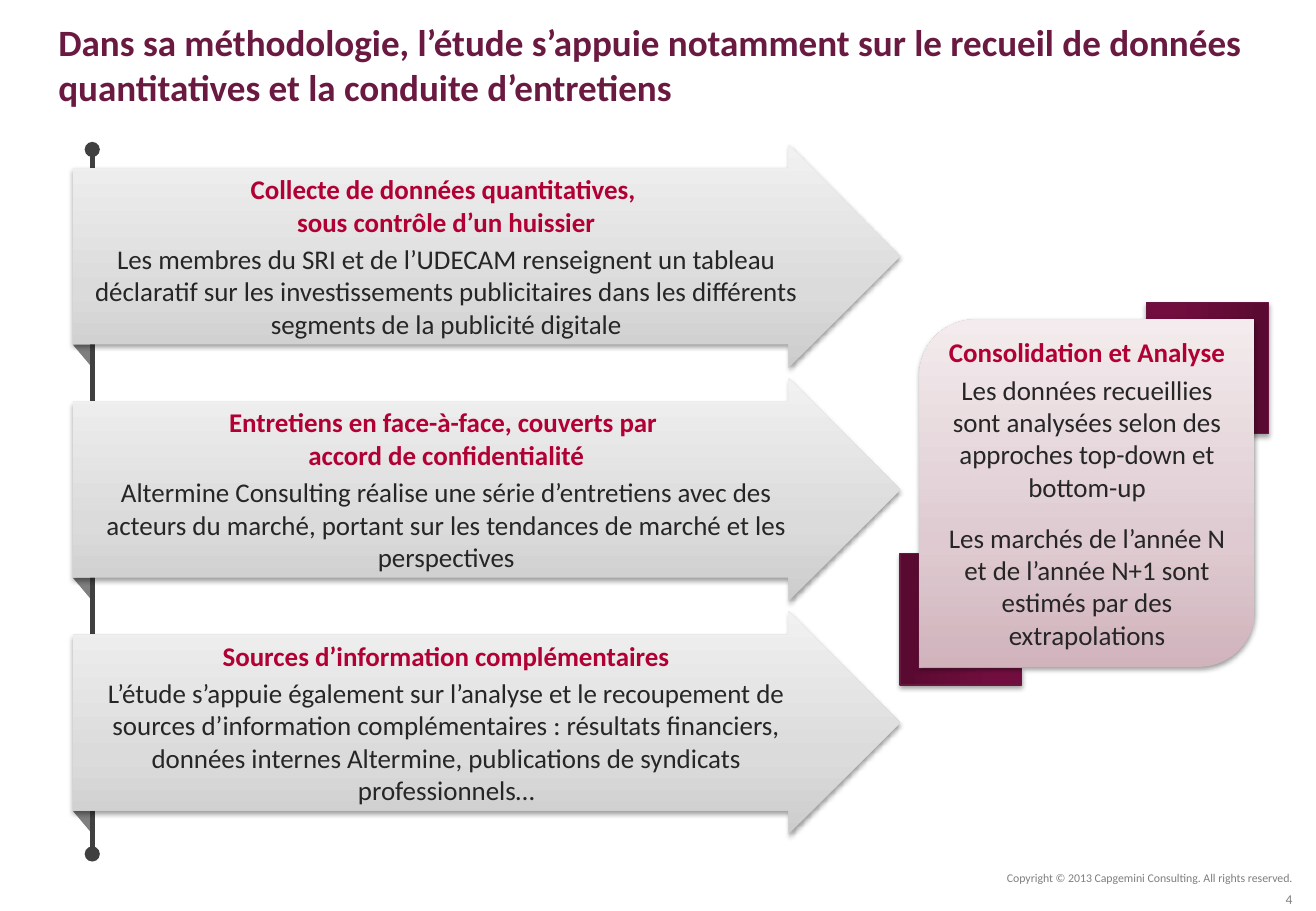
from copy import deepcopy
from lxml import etree
from pptx import Presentation
from pptx.dml.color import RGBColor
from pptx.enum.shapes import MSO_CONNECTOR, MSO_SHAPE
from pptx.enum.text import MSO_ANCHOR, PP_ALIGN
from pptx.oxml.ns import qn
from pptx.util import Pt

ARROW, CORNER = MSO_SHAPE.RIGHT_ARROW, MSO_SHAPE.CORNER
CARD, FOLD = MSO_SHAPE.ROUND_2_DIAG_RECTANGLE, MSO_SHAPE.RIGHT_TRIANGLE
LINE = MSO_CONNECTOR.STRAIGHT
MIDDLE = MSO_ANCHOR.MIDDLE
LEFT, CENTER, RIGHT = PP_ALIGN.LEFT, PP_ALIGN.CENTER, PP_ALIGN.RIGHT

COLORS = {"title": "6A1A41", "head": "B10034", "body": "262626",
          "gray": "7F7F7F", "rail": "404040", "edge": "6A1740",
          "shade": "000000"}
FADES = {
    "arrow": [(0, "CCCCCC"), (35, "DBDBDB"), (100, "F1F1F1")],
    "card": [(0, "D1B3BC"), (35, "DECAD0"), (100, "F3EBED")],
    "corner": [(0, "580A30"), (80, "720E3F"), (100, "750C3F")],
}
HEAD = {"size": Pt(16), "bold": True, "color": "head"}
BODY = {"size": Pt(16), "bold": False, "color": "body"}

TITLE = ("Dans sa méthodologie, l’étude s’appuie notamment sur le recueil de "
         "données quantitatives et la conduite d’entretiens")
STEPS = [
    ("Collecte de données quantitatives, \nsous contrôle d’un huissier",
     "Les membres du SRI et de l’UDECAM renseignent un tableau déclaratif sur "
     "les investissements publicitaires dans les différents segments de la "
     "publicité digitale"),
    ("Entretiens en face-à-face, couverts par \naccord de confidentialité",
     "Altermine Consulting réalise une série d’entretiens avec des acteurs du "
     "marché, portant sur les tendances de marché et les perspectives"),
    ("Sources d’information complémentaires",
     "L’étude s’appuie également sur l’analyse et le recoupement de sources "
     "d’information complémentaires : résultats financiers, données internes "
     "Altermine, publications de syndicats professionnels…"),
]
RESULT = (
    "Consolidation et Analyse",
    "Les données recueillies sont analysées selon des approches top-down et "
    "bottom-up",
    "Les marchés de l’année N et de l’année N+1 sont estimés par des "
    "extrapolations",
)


def rgb(name):
    return RGBColor.from_string(COLORS[name])


def style(para, look, align):
    para.alignment = align
    for run in para.runs:
        run.font.name = "Calibri"
        for key, value in look.items():
            if key == "color":
                run.font.color.rgb = rgb(value)
            else:
                setattr(run.font, key, value)
    for gap in para._p.findall(qn("a:br")):
        gap.append(deepcopy(para.runs[0]._r.rPr))


def write(shape, texts):
    frame = shape.text_frame
    frame.word_wrap = True
    frame.vertical_anchor = MIDDLE
    for i, text in enumerate(texts):
        para = frame.add_paragraph() if i else frame.paragraphs[0]
        para.text = text
        para.space_after = Pt(3)
        if i > 1:
            para.space_before = Pt(8)
        style(para, BODY if i else HEAD, CENTER)
    return frame


def tint(parent, color):
    return etree.SubElement(parent, qn("a:srgbClr"), val=color)


def fade(shape, name):
    shape.fill.gradient()
    shape.fill.gradient_angle = 90
    stops = shape._element.spPr.find(".//" + qn("a:gsLst"))
    for stop in list(stops):
        stops.remove(stop)
    for place, color in FADES[name]:
        tint(etree.SubElement(stops, qn("a:gs"), pos=str(place * 1000)), color)


def shade(shape, alpha, dist):
    shape.shadow.inherit = False
    effects = shape._element.spPr.find(qn("a:effectLst"))
    outer = etree.SubElement(
        effects, qn("a:outerShdw"), blurRad=str(Pt(3.1)), dist=str(Pt(dist)),
        dir="5400000", rotWithShape="0")
    etree.SubElement(tint(outer, COLORS["shade"]), qn("a:alpha"),
                     val=str(alpha * 1000))


def block(slide, kind, x, y, w, h):
    shape = slide.shapes.add_shape(kind, Pt(x), Pt(y), Pt(w), Pt(h))
    shape.shadow.inherit = False
    shape.line.fill.background()
    return shape


def add_title(slide, x, y, w, h):
    title = slide.shapes.title
    box = {"left": x, "top": y, "width": w, "height": h}
    for key, value in box.items():
        setattr(title, key, Pt(value))
    title.text_frame.text = TITLE
    title.text_frame.vertical_anchor = MIDDLE
    look = {"size": Pt(22), "bold": True, "color": "title"}
    style(title.text_frame.paragraphs[0], look, LEFT)


def add_note(slide, text, size, x, y, w, h):
    box = slide.shapes.add_textbox(Pt(x), Pt(y), Pt(w), Pt(h))
    frame = box.text_frame
    frame.word_wrap = True
    frame.vertical_anchor = MIDDLE
    frame.text = text
    style(frame.paragraphs[0], {"size": Pt(size), "color": "gray"}, RIGHT)


def add_rail(slide, x, y, h):
    rail = slide.shapes.add_connector(LINE, Pt(x), Pt(y), Pt(x), Pt(y + h))
    rail.line.width = Pt(3)
    rail.line.color.rgb = rgb("rail")
    for end in ("a:headEnd", "a:tailEnd"):
        etree.SubElement(rail.line._get_or_add_ln(), qn(end), type="oval")
    etree.SubElement(rail._element.spPr, qn("a:effectLst"))


def add_steps(slide, x, y, w, h, pitch):
    tops = [y + i * pitch for i in range(len(STEPS))]
    for top in tops:
        fold = block(slide, FOLD, x, top + 118.6, 11.5, 13.7)
        fold.rotation = 180
        fold.fill.solid()
        fold.fill.fore_color.rgb = rgb("gray")
    add_rail(slide, x + 11.5, y + 2.9, 417.6)
    for top, texts in zip(tops, STEPS):
        arrow = block(slide, ARROW, x, top, w, h)
        arrow.adjustments[0] = 0.787
        arrow.adjustments[1] = 0.5
        fade(arrow, "arrow")
        shade(arrow, 38, 1.6)
        write(arrow, texts).margin_left = Pt(11.5)


def add_result(slide, x, y, w, h):
    for dx, dy, turn in ((131.8, -7.2, 270), (-14.4, 141.8, 90)):
        corner = block(slide, CORNER, x + dx, y + dy, 77.8, 72)
        corner.adjustments[0] = 0.153
        corner.adjustments[1] = 0.139
        corner.rotation = turn
        corner._element.spPr.xfrm.set("flipH", "1")
        fade(corner, "corner")
        corner.line.color.rgb = rgb("edge")
        corner.line.width = Pt(0.75)
        shade(corner, 35, 1.8)
    card = block(slide, CARD, x, y, w, h)
    fade(card, "card")
    shade(card, 38, 1.6)
    write(card, RESULT)


def main():
    deck = Presentation()
    deck.slide_width, deck.slide_height = Pt(780), Pt(540)
    slide = deck.slides.add_slide(deck.slide_layouts[5])
    add_title(slide, 27.4, 7.9, 752.4, 60.5)
    add_note(slide, "Copyright © 2013 Capgemini Consulting. All rights reserved.",
             7, 545, 512.6, 228.2, 15.8)
    add_result(slide, 545, 189.4, 198.7, 205.9)
    add_steps(slide, 43.2, 85.7, 490.3, 132.5, 138.2)
    add_note(slide, "4", 8, 591.1, 528.5, 182.1, 9.4)
    deck.save("out.pptx")


if __name__ == "__main__":
    main()
